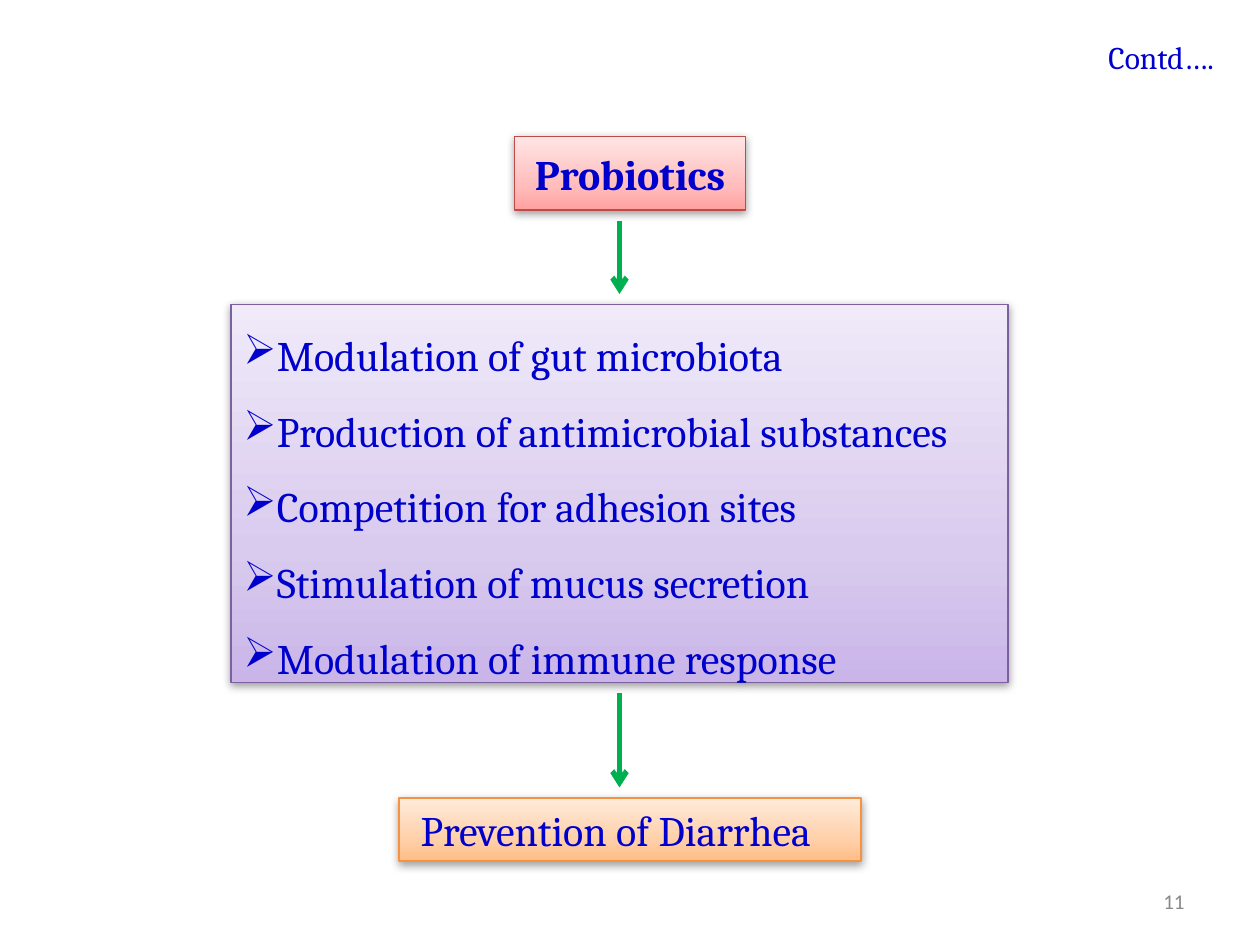
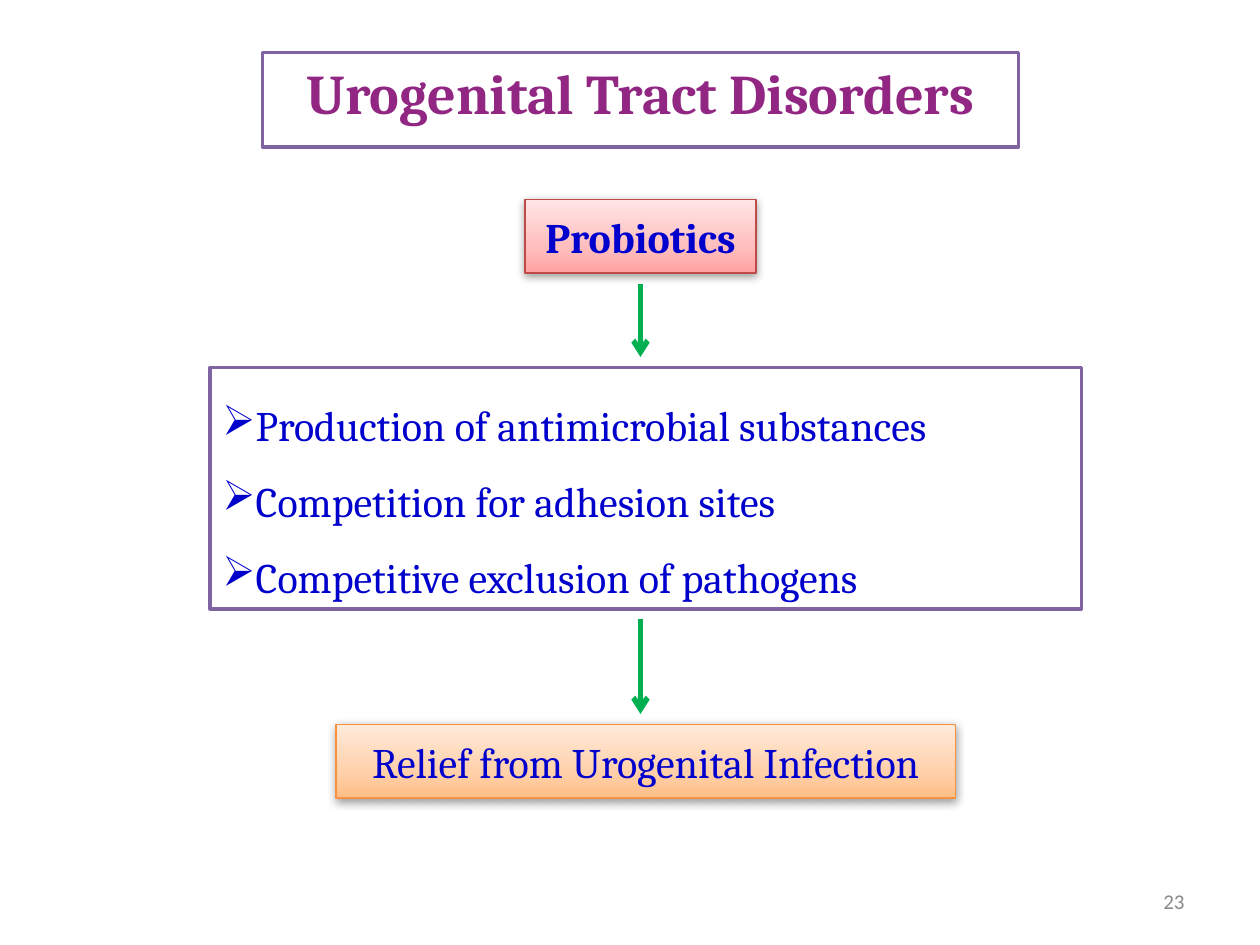
from lxml import etree
from pptx import Presentation
from pptx import util as u
from pptx.dml.color import RGBColor
from pptx.enum import shapes, text
from pptx.oxml import parse_xml
from pptx.oxml.ns import nsdecls, qn

COLORS = {
    "body": "0000CC", "title": "922683", "number": "898989", "arrow": "00B050",
    "white": "FFFFFF", "frame": "8064A2",
}
STYLES = {
    "red": {"line": "BE4B48", "stops": ("FFA2A1", "FFBEBD", "FFE5E5")},
    "purple": {"line": "7D60A0", "stops": ("C9B5E8", "D9CBEE", "F0EAF9")},
    "orange": {"line": "F69240", "stops": ("FFBE86", "FFD0AA", "FFEBDB")},
    "outline": {"line": COLORS["frame"], "stops": None},
}
STOP_POSITIONS = (0, 35, 100)
COLUMNS, ROWS = 120, 90
SLIDE_WIDTH, SLIDE_HEIGHT = u.Inches(10), u.Inches(7.5)
ARROW_GAP = 1
NUMBER_AREA = (86, 83.4, 28, 4.8)
ALIGN = text.PP_ALIGN
MIDDLE, TOP = text.MSO_ANCHOR.MIDDLE, text.MSO_ANCHOR.TOP

SLIDES = [
    {
        "number": "11",
        "continued": ("Contd….", (99, 3, 17.8, 4.8)),
        "arrow_column": 59,
        "cause": ("Probiotics", (49, 13, 22, 7)),
        "effects": (
            ["Modulation of gut microbiota", "Production of antimicrobial substances",
             "Competition for adhesion sites", "Stimulation of mucus secretion",
             "Modulation of immune response"],
            (22, 29, 74, 36), "purple"),
        "outcome": (" Prevention of Diarrhea", (38, 76, 44, 6), ALIGN.JUSTIFY),
    },
    {
        "number": "23",
        "title": ("Urogenital Tract Disorders", (25, 5, 72, 9)),
        "arrow_column": 61,
        "cause": ("Probiotics", (50, 19, 22, 7)),
        "effects": (
            ["Production of antimicrobial substances", "Competition for adhesion sites",
             "Competitive exclusion of pathogens"],
            (20, 35, 83, 23), "outline"),
        "outcome": ("Relief from Urogenital Infection", (32, 69, 59, 7), ALIGN.CENTER),
    },
]


def across(columns):
    return round(SLIDE_WIDTH * columns / COLUMNS)


def down(rows):
    return round(SLIDE_HEIGHT * rows / ROWS)


def place(area):
    left, top, width, height = area
    return across(left), down(top), across(width), down(height)


def add_bullet(paragraph):
    properties = paragraph._p.get_or_add_pPr()
    properties.set("marL", str(u.Inches(0.26)))
    properties.set("indent", str(-u.Inches(0.26)))
    etree.SubElement(properties, qn("a:buChar")).set("char", "➢")


def write(shape, lines, size=24, color="body", bold=False, align=ALIGN.CENTER,
          anchor=MIDDLE, font="Cambria", bullets=False):
    frame = shape.text_frame
    frame.word_wrap = True
    frame.vertical_anchor = anchor
    for index, line in enumerate(lines):
        paragraph = frame.add_paragraph() if index else frame.paragraphs[0]
        paragraph.alignment = align
        if bullets:
            add_bullet(paragraph)
            paragraph.line_spacing = 1.5
        run = paragraph.add_run()
        run.text = line
        run.font.name, run.font.size, run.font.bold = font, u.Pt(size), bold
        run.font.color.rgb = RGBColor.from_string(COLORS[color])


def add_gradient(shape, stops):
    shape.fill.gradient()
    shape.fill.gradient_angle = 90
    stop_list = shape._element.spPr.find(".//" + qn("a:gsLst"))
    for stop in list(stop_list):
        stop_list.remove(stop)
    for position, color in zip(STOP_POSITIONS, stops):
        stop = etree.SubElement(stop_list, qn("a:gs"), pos=str(position * 1000))
        etree.SubElement(stop, qn("a:srgbClr"), val=color)


def add_shadow(shape):
    effects = shape._element.spPr.find(qn("a:effectLst"))
    effects.append(parse_xml(
        f'<a:outerShdw {nsdecls("a")} blurRad="{u.Pt(5)}" dist="{u.Pt(1.6)}" '
        'dir="5400000" rotWithShape="0"><a:srgbClr val="000000">'
        '<a:alpha val="38000"/></a:srgbClr></a:outerShdw>'))


def add_box(slide, area, style_name, lines, **text_style):
    style = STYLES[style_name]
    shape = slide.shapes.add_shape(shapes.MSO_SHAPE.RECTANGLE, *place(area))
    shape.shadow.inherit = False
    shape.line.color.rgb = RGBColor.from_string(style["line"])
    if style["stops"]:
        add_gradient(shape, style["stops"])
        add_shadow(shape)
        shape.line.width = u.Pt(0.75)
    else:
        shape.fill.solid()
        shape.fill.fore_color.rgb = RGBColor.from_string(COLORS["white"])
        shape.line.width = u.Pt(2)
    write(shape, lines, **text_style)


def add_label(slide, area, line, **text_style):
    write(slide.shapes.add_textbox(*place(area)), [line], align=ALIGN.RIGHT, **text_style)


def add_arrow(slide, column, upper, lower):
    start = upper[1] + upper[3] + ARROW_GAP
    end = lower[1] - ARROW_GAP
    arrow = slide.shapes.add_connector(
        shapes.MSO_CONNECTOR.STRAIGHT, across(column), down(start), across(column), down(end))
    arrow.line.color.rgb = RGBColor.from_string(COLORS["arrow"])
    arrow.line.width = u.Pt(3)
    etree.SubElement(arrow.line._get_or_add_ln(), qn("a:tailEnd"), type="arrow")
    etree.SubElement(arrow._element.spPr, qn("a:effectLst"))


def build_slide(presentation, content):
    slide = presentation.slides.add_slide(presentation.slide_layouts[6])
    cause, cause_area = content["cause"]
    effects, effects_area, effects_style = content["effects"]
    outcome, outcome_area, outcome_align = content["outcome"]
    if "title" in content:
        title, title_area = content["title"]
        add_box(slide, title_area, "outline", [title], size=32, color="title",
                bold=True, anchor=TOP)
    add_box(slide, effects_area, effects_style, effects, align=ALIGN.JUSTIFY, bullets=True)
    add_box(slide, cause_area, "red", [cause], bold=True)
    add_box(slide, outcome_area, "orange", [outcome], align=outcome_align)
    if "continued" in content:
        label, label_area = content["continued"]
        add_label(slide, label_area, label, size=18, anchor=TOP)
    add_label(slide, NUMBER_AREA, content["number"], size=12, color="number", font="Calibri")
    add_arrow(slide, content["arrow_column"], cause_area, effects_area)
    add_arrow(slide, content["arrow_column"], effects_area, outcome_area)


def main():
    """Build the two probiotics flow slides."""
    presentation = Presentation()
    presentation.slide_width, presentation.slide_height = SLIDE_WIDTH, SLIDE_HEIGHT
    for content in SLIDES:
        build_slide(presentation, content)
    presentation.save("out.pptx")


if __name__ == "__main__":
    main()
